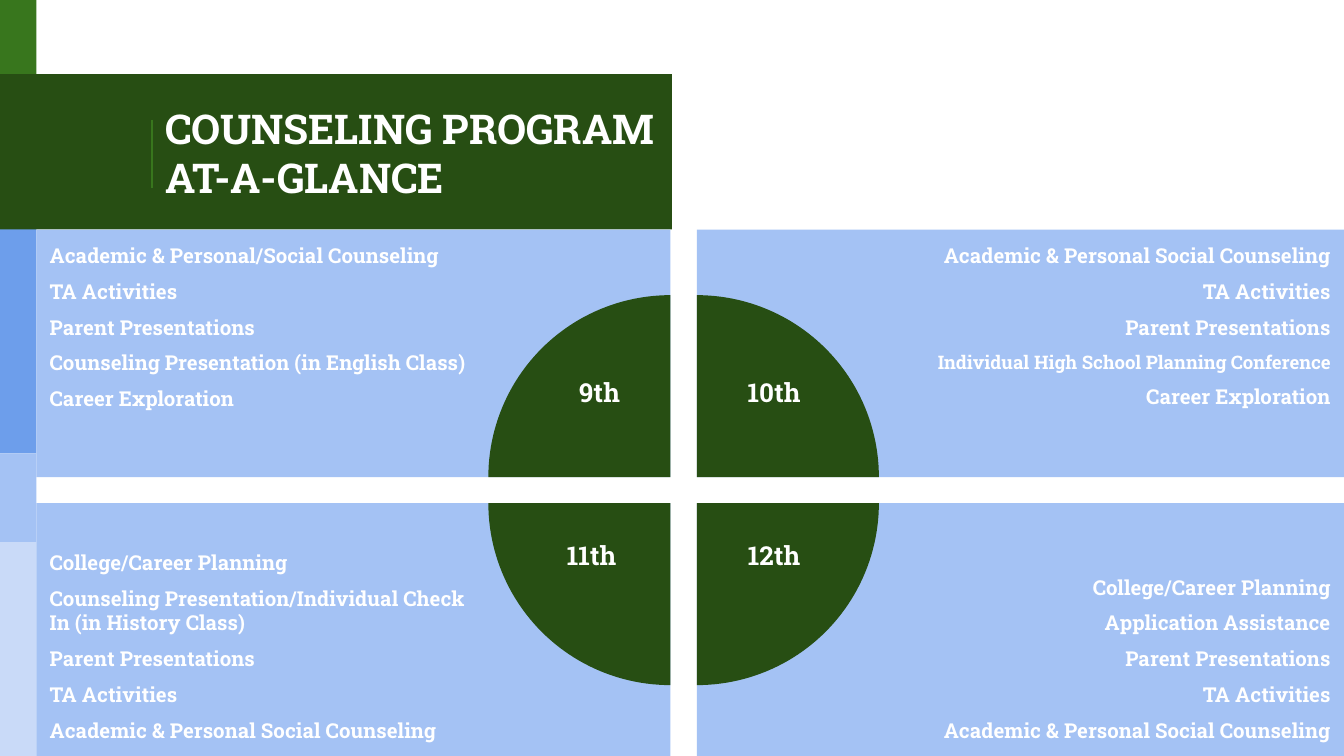
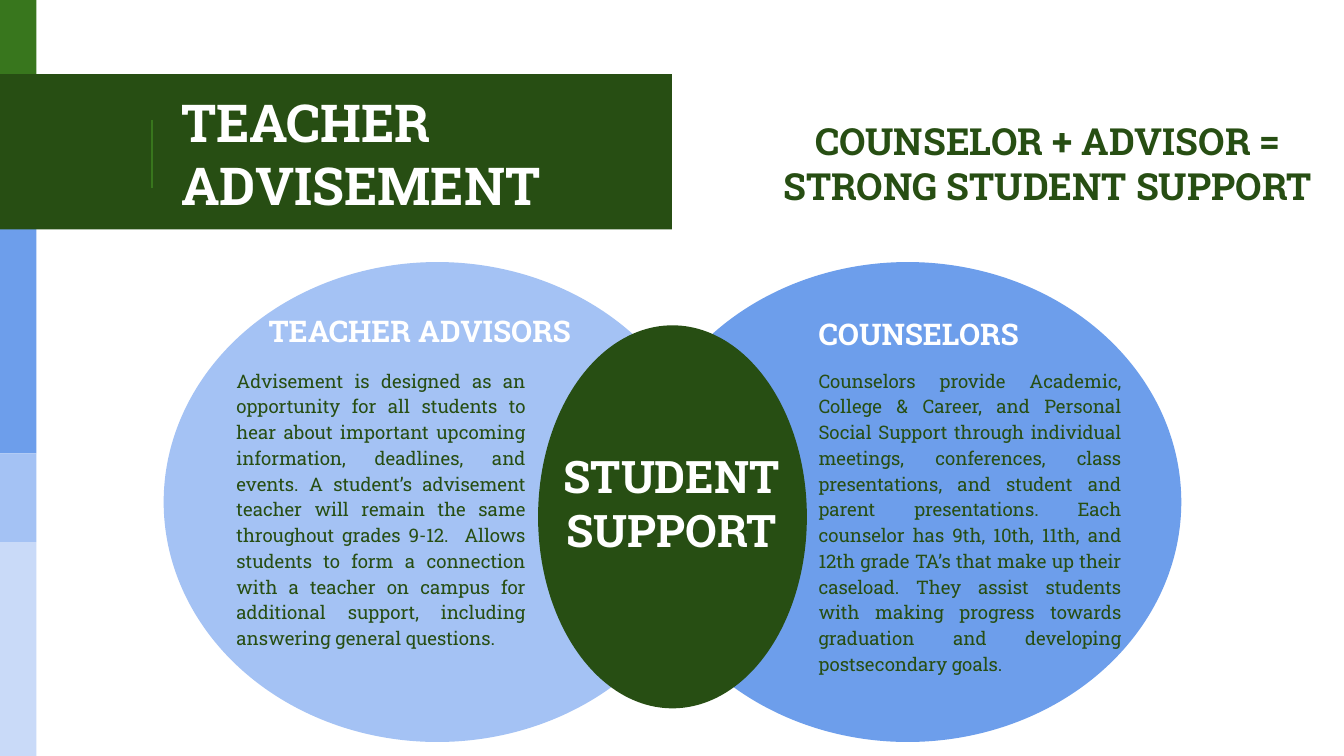
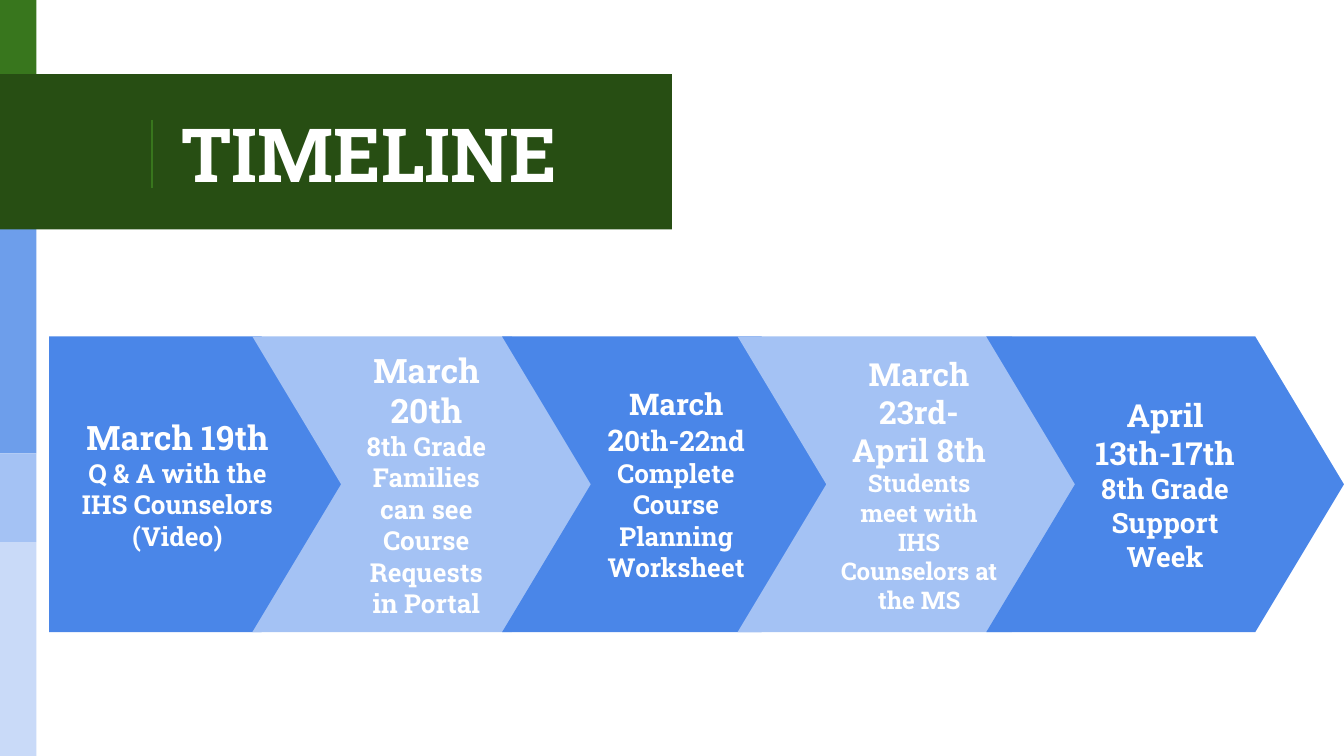
from dataclasses import dataclass

from lxml.etree import SubElement
from pptx import Presentation
from pptx.dml.color import RGBColor
from pptx.enum.shapes import MSO_CONNECTOR, MSO_SHAPE as Shape
from pptx.enum.text import MSO_ANCHOR as Anchor, PP_ALIGN as Align
from pptx.oxml.ns import qn
from pptx.util import Cm, Pt


@dataclass(frozen=True)
class Theme:
    font: str = "Roboto Slab"
    white: str = "FFFFFF"
    leaf: str = "38761D"
    forest: str = "274E13"
    azure: str = "4A86E8"
    blue: str = "6D9EEB"
    sky: str = "A4C2F4"
    mist: str = "C9DAF8"
    body: int = 10
    item: int = 11
    grade: int = 14
    heading: int = 16
    slogan: int = 20
    hub: int = 24
    inset: float = 0.25


THEME = Theme()
WIDTH, HEIGHT = 25.4, 14.29
RAIL_WIDTH = 0.69
BAND_TOP, BAND_BOTTOM = 1.4, 4.34


def rgb(color):
    return RGBColor.from_string(color)


def lines(size, *texts):
    """One paragraph per text, each a list of (text, size) pieces."""
    return [[(text, size)] for text in texts]


def write(frame, paragraphs, color=THEME.white, bold=True, align=Align.LEFT,
          anchor=Anchor.TOP, insets=(THEME.inset,) * 4, gap=0, spacing=None):
    """Fill a frame; insets run left, top, right, bottom."""
    frame.word_wrap = True
    frame.vertical_anchor = anchor
    (frame.margin_left, frame.margin_top,
     frame.margin_right, frame.margin_bottom) = map(Cm, insets)
    for index, pieces in enumerate(paragraphs):
        paragraph = frame.add_paragraph() if index else frame.paragraphs[0]
        paragraph.alignment = align
        if index and gap:
            paragraph.space_before = Pt(gap)
        if spacing:
            paragraph.line_spacing = spacing
        paragraph.text = pieces[0][0]
        for text, _ in pieces[1:]:
            paragraph.add_run().text = text
        for run, (_, size) in zip(paragraph.runs, pieces):
            run.font.name = THEME.font
            run.font.size = Pt(size)
            run.font.bold = bold
            run.font.color.rgb = rgb(color)


def add_block(slide, kind, left, top, width, height, color, outline=0):
    block = slide.shapes.add_shape(kind, Cm(left), Cm(top), Cm(width), Cm(height))
    block.shadow.inherit = False
    block.fill.solid()
    block.fill.fore_color.rgb = rgb(color)
    if outline:
        block.line.color.rgb = rgb(color)
        block.line.width = Pt(outline)
    else:
        block.line.fill.background()
    return block


def add_label(slide, left, top, width, height, paragraphs, **style):
    label = slide.shapes.add_textbox(Cm(left), Cm(top), Cm(width), Cm(height))
    write(label.text_frame, paragraphs, **style)


def add_rule(slide, x, top, bottom):
    rule = slide.shapes.add_connector(
        MSO_CONNECTOR.STRAIGHT, Cm(x), Cm(top), Cm(x), Cm(bottom))
    rule.line.color.rgb = rgb(THEME.leaf)
    rule.line.width = Pt(0.75)
    SubElement(rule.element.spPr, qn("a:effectLst"))


def start_slide(deck, title, left=3.18, width=8.92):
    """Add a slide with the colour rail, the title band and its title."""
    slide = deck.slides.add_slide(deck.slide_layouts[6])
    rail = [(0, 1.47, THEME.leaf), (4.32, 8.57, THEME.blue),
            (8.57, 10.25, THEME.sky), (10.25, HEIGHT, THEME.mist)]
    for top, bottom, color in rail:
        add_block(slide, Shape.RECTANGLE, 0, top, RAIL_WIDTH, bottom - top, color)
    add_block(slide, Shape.RECTANGLE, 0, BAND_TOP, WIDTH / 2,
              BAND_BOTTOM - BAND_TOP, THEME.forest)
    add_rule(slide, 2.87, 2.26, 3.56)
    add_label(slide, left, 1.47, width, 2.84, title, anchor=Anchor.MIDDLE)
    return slide


def add_grade(slide, grade, items, is_right, is_lower, name_width=2.74):
    """Draw one quadrant: its activities, quarter disc and grade name."""
    left, right = (13.17, WIDTH) if is_right else (RAIL_WIDTH, 12.67)
    top, bottom = (9.51, HEIGHT) if is_lower else (BAND_BOTTOM, 9.02)
    panel = add_block(slide, Shape.RECTANGLE, left, top,
                      right - left, bottom - top, THEME.sky)
    outer, inner = THEME.inset, 3.81
    sides = (inner, outer) if is_right else (outer, inner)
    write(panel.text_frame, items, gap=6,
          align=Align.RIGHT if is_right else Align.LEFT,
          anchor=Anchor.BOTTOM if is_lower else Anchor.TOP,
          insets=(sides[0], THEME.inset, sides[1], THEME.inset))

    diameter = 6.88
    center_x = left if is_right else right
    center_y = top if is_lower else bottom
    disc = add_block(slide, Shape.PIE, center_x - diameter / 2,
                     center_y - diameter / 2, diameter, diameter, THEME.forest)
    disc.adjustments[0], disc.adjustments[1] = 108, 162
    disc.rotation = {(False, False): 0, (True, False): 90,
                     (True, True): 180, (False, True): 270}[is_right, is_lower]

    name_left = 13.26 if is_right else 12.55 - name_width
    add_label(slide, name_left, 10.06 if is_lower else 6.98, name_width, 1.35,
              lines(THEME.grade, grade), align=Align.CENTER,
              insets=(0.25, 0.13, 0.25, 0.13))


def build_program(deck):
    slide = start_slide(deck, lines(22, "COUNSELING PROGRAM", "AT-A-GLANCE"),
                        left=2.87, width=22.53)
    social = "Academic & Personal Social Counseling"
    planning = "College/Career Planning"
    activities, parents = "TA Activities", "Parent Presentations"
    career = "Career Exploration"
    ninth = lines(THEME.item, "Academic & Personal/Social Counseling", activities,
                  parents, "Counseling Presentation (in English Class)", career)
    tenth = (lines(THEME.item, social, activities, parents)
             + lines(THEME.body, "Individual High School Planning Conference")
             + lines(THEME.item, career))
    eleventh = lines(
        THEME.item, planning,
        "Counseling Presentation/Individual Check In (in History Class)",
        parents, activities, social)
    twelfth = lines(THEME.item, planning, "Application Assistance",
                    parents, activities, social)
    add_grade(slide, "9th", ninth, False, False, name_width=2.44)
    add_grade(slide, "10th", tenth, True, False)
    add_grade(slide, "11th", eleventh, False, True)
    add_grade(slide, "12th", twelfth, True, True)


def build_advisement(deck):
    slide = start_slide(deck, lines(28, "TEACHER ADVISEMENT"))
    for left, color in ((3.2, THEME.sky), (12.09, THEME.blue)):
        add_block(slide, Shape.OVAL, left, 5.06, 10.13, 8.86, color, outline=6)
    add_block(slide, Shape.OVAL, 10.17, 6.15, 5.08, 7.24, THEME.forest)
    add_label(slide, 10.37, 8.23, 4.65, 2.57,
              lines(THEME.hub, "STUDENT", "SUPPORT"), align=Align.CENTER)
    add_label(slide, 4.83, 5.67, 6.35, 1.19,
              lines(THEME.heading, "TEACHER ADVISORS"))
    add_label(slide, 14.19, 5.71, 6.35, 1.19,
              lines(THEME.heading, "COUNSELORS"), align=Align.CENTER)
    add_label(slide, 14.46, 1.99, 10.69, 2.24,
              lines(THEME.slogan, "COUNSELOR + ADVISOR =", "STRONG STUDENT SUPPORT"),
              color=THEME.forest, align=Align.CENTER)
    roles = [
        (4.22, 5.96, 7.09,
         "Advisement is designed as an opportunity for all students to hear about "
         "important upcoming information, deadlines, and events. A student’s "
         "advisement teacher will remain the same throughout grades 9-12.  Allows "
         "students to form a connection with a teacher on campus for additional "
         "support, including answering general questions."),
        (15.22, 6.22, 7.59,
         "Counselors provide Academic, College & Career, and Personal Social Support "
         "through individual meetings, conferences, class presentations, and student "
         "and parent presentations. Each counselor has 9th, 10th, 11th, and 12th "
         "grade TA’s that make up their caseload. They assist students with making "
         "progress towards graduation and developing postsecondary goals."),
    ]
    for left, width, height, role in roles:
        add_label(slide, left, 6.67, width, height, lines(THEME.body, role),
                  color=THEME.forest, bold=False, align=Align.JUSTIFY, spacing=1.15)


def build_timeline(deck):
    slide = start_slide(deck, lines(40, "TIMELINE"))
    steps = [
        (0.93, 5.69, lines(18, "March 19th")
         + lines(14, "Q & A with the IHS Counselors", "(Video)")),
        (4.77, 6.58, lines(18, "March 20th")
         + lines(14, "8th Grade Families can see Course Requests in Portal")),
        (9.49, 6.58, [[("March 2", 16), ("0th-22nd", 15)]]
         + lines(14, "Complete", "Course Planning Worksheet")),
        (13.94, 6.86, lines(17, "March 23rd- April 8th")
         + lines(13, "Students meet with IHS Counselors at the MS")),
        (18.64, 6.76, lines(17, "April 13th-17th")
         + lines(15, "8th Grade Support Week")),
    ]
    for index, (left, width, text) in enumerate(steps):
        arrow = add_block(slide, Shape.CHEVRON if index else Shape.PENTAGON,
                          left, 6.36, width, 5.59,
                          THEME.sky if index % 2 else THEME.azure)
        arrow.adjustments[0] = 0.3
        write(arrow.text_frame, text, align=Align.CENTER, anchor=Anchor.MIDDLE)


def main():
    deck = Presentation()
    deck.slide_width, deck.slide_height = Cm(WIDTH), Cm(HEIGHT)
    build_program(deck)
    build_advisement(deck)
    build_timeline(deck)
    deck.save("out.pptx")


if __name__ == "__main__":
    main()
